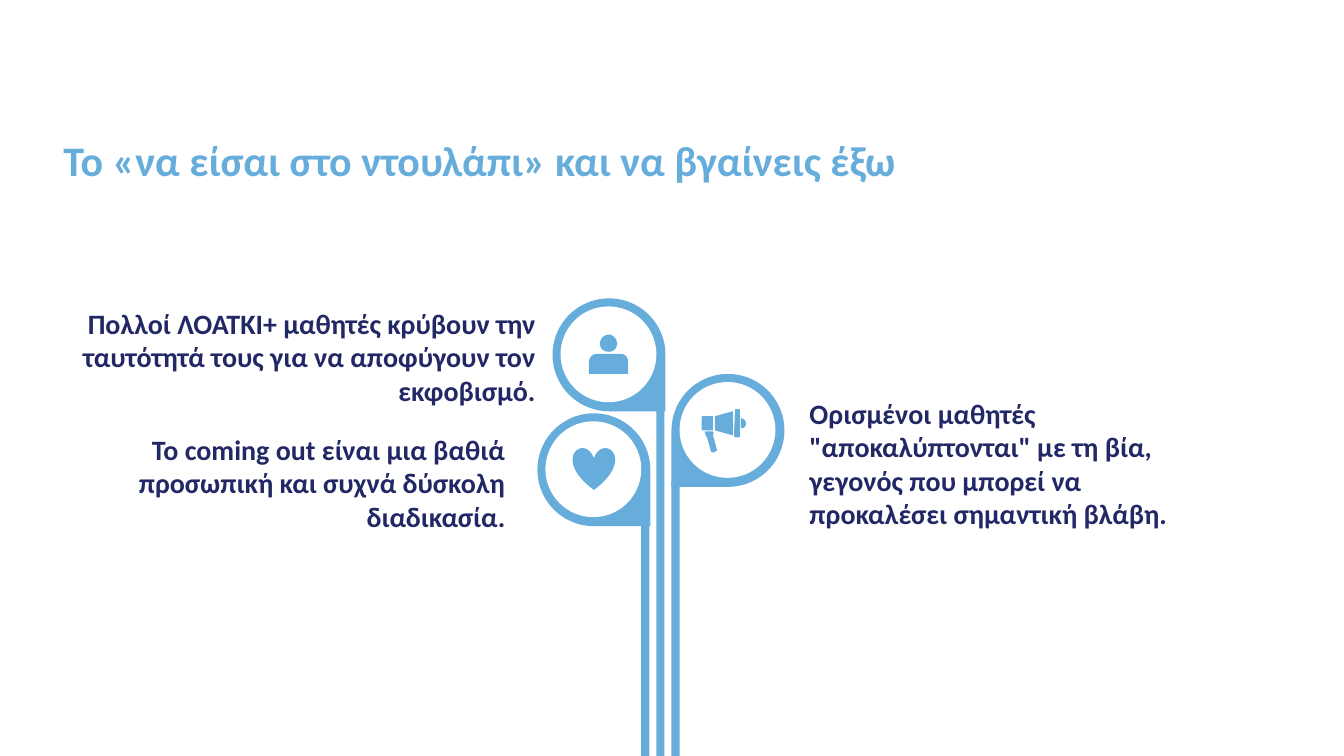
import dataclasses

import pptx
import pptx.dml.color
import pptx.enum.shapes
import pptx.enum.text
import pptx.util

SHAPE = pptx.enum.shapes.MSO_SHAPE
ALIGN = pptx.enum.text.PP_ALIGN
ANCHOR = pptx.enum.text.MSO_ANCHOR
AUTO = pptx.enum.text.MSO_AUTO_SIZE


@dataclasses.dataclass(frozen=True)
class Theme:
    font: str = "Calibri"
    blue: str = "67ADDB"
    navy: str = "222866"
    white: str = "FFFFFF"
    title_size: int = 30
    body_size: int = 20


def flatten(contour, steps=8):
    """Turn (x, y) corners and six-number Bézier curves into plain points."""
    points = [contour[0]]
    for segment in contour[1:]:
        if len(segment) == 2:
            points.append(segment)
            continue
        x0, y0 = points[-1]
        x1, y1, x2, y2, x3, y3 = segment
        for i in range(1, steps + 1):
            t = i / steps
            u = 1 - t
            a, b, c, d = u**3, 3 * u * u * t, 3 * u * t * t, t**3
            points.append((a * x0 + b * x1 + c * x2 + d * x3,
                           a * y0 + b * y1 + c * y2 + d * y3))
    return points


class Canvas:
    """Draws on one slide; lengths are px, 100 to the inch."""

    PX = 9144

    def __init__(self, s, theme):
        self.s = s
        self.theme = theme

    def paint(self, sp, color):
        sp.shadow.inherit = False
        sp.fill.solid()
        sp.fill.fore_color.rgb = pptx.dml.color.RGBColor.from_string(color)
        sp.line.fill.background()
        return sp

    def shape(self, kind, x, y, w, h, color):
        box = [v * self.PX for v in (x, y, w, h)]
        return self.paint(self.s.shapes.add_shape(kind, *box), color)

    def icon(self, contours, color):
        outlines = [[(x * self.PX, y * self.PX) for x, y in flatten(c)] for c in contours]
        builder = self.s.shapes.build_freeform(*outlines[0][0])
        for i, outline in enumerate(outlines):
            if i:
                builder.move_to(*outline[0])
            builder.add_line_segments(outline[1:], close=True)
        return self.paint(builder.convert_to_shape(), color)

    def bubble(self, x, y, rotation):
        """Ring whose pointed corner is turned towards its stem."""
        drop = self.shape(SHAPE.TEAR, x, y, 112, 112, self.theme.blue)
        drop.rotation = rotation
        self.shape(SHAPE.OVAL, x + 8, y + 8, 95, 95, self.theme.white)

    def text(self, words, x, y, w, h, size, color, align=ALIGN.LEFT,
             anchor=ANCHOR.TOP, auto=AUTO.SHAPE_TO_FIT_TEXT, spacing=None):
        tf = self.s.shapes.add_textbox(*[v * self.PX for v in (x, y, w, h)]).text_frame
        tf.word_wrap = True
        tf.auto_size = auto
        tf.vertical_anchor = anchor
        p = tf.paragraphs[0]
        p.text = words
        p.alignment = align
        p.line_spacing = spacing
        p.font.name = self.theme.font
        p.font.size = pptx.util.Pt(size)
        p.font.bold = True
        p.font.color.rgb = pptx.dml.color.RGBColor.from_string(color)


BUBBLES = [(548, 296, 90), (533, 410, 90), (666, 371, 180)]
STEM_TOPS = [478, 396, 478]

STATEMENTS = [
    ("Πολλοί ΛΟΑΤΚΙ+ μαθητές κρύβουν την ταυτότητά τους για να αποφύγουν τον εκφοβισμό.",
     53, 299, 488, 111, ALIGN.RIGHT),
    ("Το coming out είναι μια βαθιά προσωπική και συχνά δύσκολη διαδικασία.",
     113, 424, 398, 77, ALIGN.RIGHT),
    ("Ορισμένοι μαθητές \"αποκαλύπτονται\" με τη βία, γεγονός που μπορεί να "
     "προκαλέσει σημαντική βλάβη.",
     793, 388, 398, 111, ALIGN.LEFT),
]

MEGAPHONE = [
    # handle
    [(707, 428), (708, 430), (708, 430, 708, 431, 707, 431), (711, 446),
     (711, 447, 711, 448, 709, 448), (708, 449), (706, 449, 705, 449, 705, 447),
     (701, 433), (700, 433, 700, 433, 700, 432), (699, 428)],
    # sound outlet
    [(735, 415), (738, 415, 740, 418, 740, 420), (740, 423, 738, 425, 735, 425),
     (735, 422, 735, 419, 735, 415)],
    # back
    [(698, 413), (707, 413), (707, 427), (697, 427), (696, 427, 696, 426, 696, 425),
     (696, 415), (696, 413, 696, 413, 698, 413)],
    # horn
    [(727, 408), (727, 432), (709, 427), (709, 413)],
    # rim
    [(730, 406), (733, 406), (733, 406, 734, 406, 734, 407), (734, 433),
     (734, 433, 733, 434, 732, 434), (730, 434), (729, 434, 728, 433, 728, 432),
     (729, 407), (729, 407, 729, 406, 730, 406)],
]

PERSON = [
    # shoulders
    [(592, 351), (616, 351), (620, 351, 623, 355, 623, 359), (623, 371), (584, 371),
     (584, 359), (584, 355, 588, 351, 592, 351)],
    # head
    [(604, 332), (608, 332, 612, 336, 612, 341), (612, 346, 608, 349, 604, 349),
     (599, 349, 595, 346, 595, 341), (595, 336, 599, 332, 604, 332)],
]


def main():
    prs = pptx.Presentation()
    prs.slide_width = 1333 * Canvas.PX
    prs.slide_height = 750 * Canvas.PX
    theme = Theme()
    canvas = Canvas(prs.slides.add_slide(prs.slide_layouts[6]), theme)

    for x, y, rotation in BUBBLES:
        canvas.bubble(x, y, rotation)
    for i, top in enumerate(STEM_TOPS):
        canvas.shape(SHAPE.RECTANGLE, 636 + 15 * i, top, 8, 750 - top, theme.blue)

    canvas.text("Το «να είσαι στο ντουλάπι» και να βγαίνεις έξω", 53, 125, 1189, 74,
                theme.title_size, theme.blue, anchor=ANCHOR.MIDDLE, auto=AUTO.NONE,
                spacing=0.9)
    for words, x, y, w, h, align in STATEMENTS:
        canvas.text(words, x, y, w, h, theme.body_size, theme.navy, align)

    canvas.icon(MEGAPHONE, theme.blue)
    canvas.shape(SHAPE.HEART, 568, 444, 42, 42, theme.blue)
    canvas.icon(PERSON, theme.blue)

    prs.save("out.pptx")


if __name__ == "__main__":
    main()
